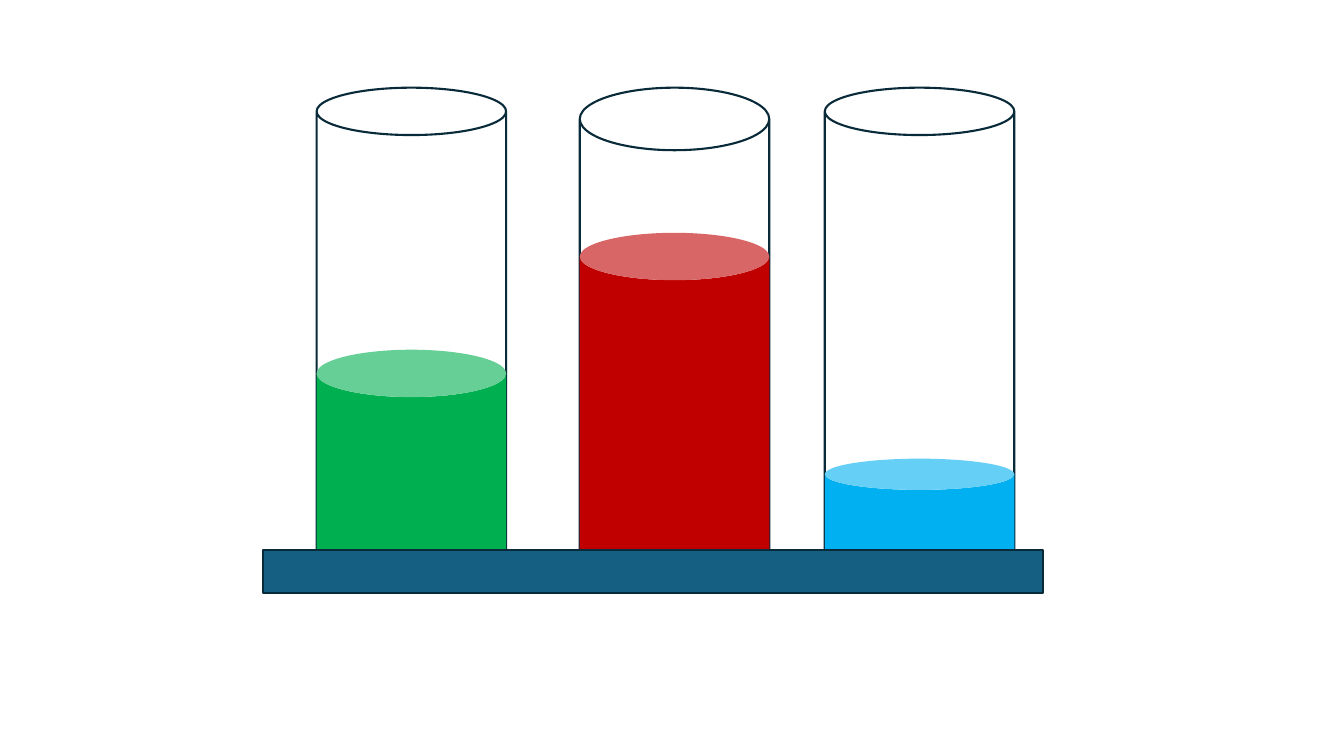
from dataclasses import dataclass
from typing import Optional

from pptx import Presentation
from pptx.dml.color import RGBColor
from pptx.enum.shapes import MSO_SHAPE as Preset
from pptx.slide import Slide
from pptx.util import Inches, Pt

SLIDE_WIDTH = Inches(13.33)
SLIDE_HEIGHT = Inches(7.5)

TUBE_WIDTH = 14.1
TUBE_TOP = 11.6
TUBE_BOTTOM = 77.2
RIM = 0.25


@dataclass(frozen=True)
class Theme:
    outline: str = "092A39"
    rack: str = "156082"
    green: str = "00B050"
    red: str = "C00000"
    blue: str = "00B0F0"
    outline_width: float = 1.5


@dataclass(frozen=True)
class Area:
    """Edges and extents in percent of the slide's size."""

    left: float
    top: float
    width: float
    height: float


@dataclass(frozen=True)
class Tube:
    left: float
    liquid_top: float
    liquid: str
    rim: float = RIM


THEME = Theme()
RACK = Area(19.58, 72.8, 58.06, 5.6)
TUBES = (
    Tube(23.56, 46.27, THEME.green),
    Tube(43.14, 30.8, THEME.red, rim=0.33),
    Tube(61.37, 60.67, THEME.blue),
)


def draw_shape(slide: Slide, preset: Preset, area: Area, *,
               fill: Optional[str] = None, outlined: bool = False,
               rim: Optional[float] = None) -> None:
    shape = slide.shapes.add_shape(
        preset,
        round(SLIDE_WIDTH * area.left / 100),
        round(SLIDE_HEIGHT * area.top / 100),
        round(SLIDE_WIDTH * area.width / 100),
        round(SLIDE_HEIGHT * area.height / 100),
    )
    shape.shadow.inherit = False
    if rim is not None:
        shape.adjustments[0] = rim
    if fill:
        shape.fill.solid()
        shape.fill.fore_color.rgb = RGBColor.from_string(fill)
    else:
        shape.fill.background()
    if outlined:
        shape.line.color.rgb = RGBColor.from_string(THEME.outline)
        shape.line.width = Pt(THEME.outline_width)
    else:
        shape.line.fill.background()


def tube_area(tube: Tube, top: float) -> Area:
    return Area(tube.left, top, TUBE_WIDTH, TUBE_BOTTOM - top)


def main() -> None:
    presentation = Presentation()
    presentation.slide_width = SLIDE_WIDTH
    presentation.slide_height = SLIDE_HEIGHT
    slide = presentation.slides.add_slide(presentation.slide_layouts[6])

    for tube in TUBES:
        draw_shape(slide, Preset.CAN, tube_area(tube, TUBE_TOP),
                   outlined=True, rim=tube.rim)
    for tube in TUBES:
        draw_shape(slide, Preset.CAN, tube_area(tube, tube.liquid_top),
                   fill=tube.liquid, rim=RIM)
    draw_shape(slide, Preset.RECTANGLE, RACK, fill=THEME.rack, outlined=True)

    presentation.save("out.pptx")


if __name__ == "__main__":
    main()
